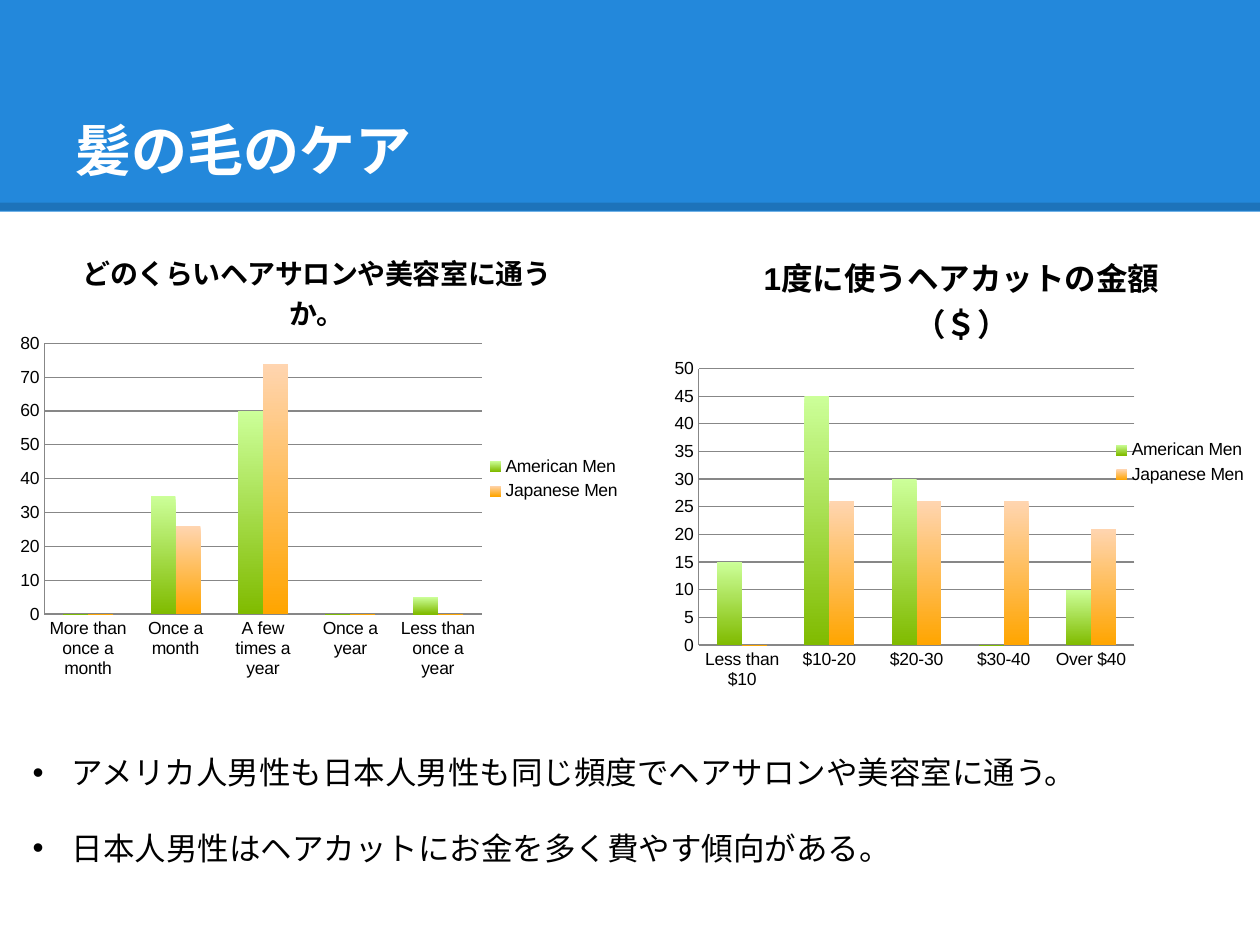
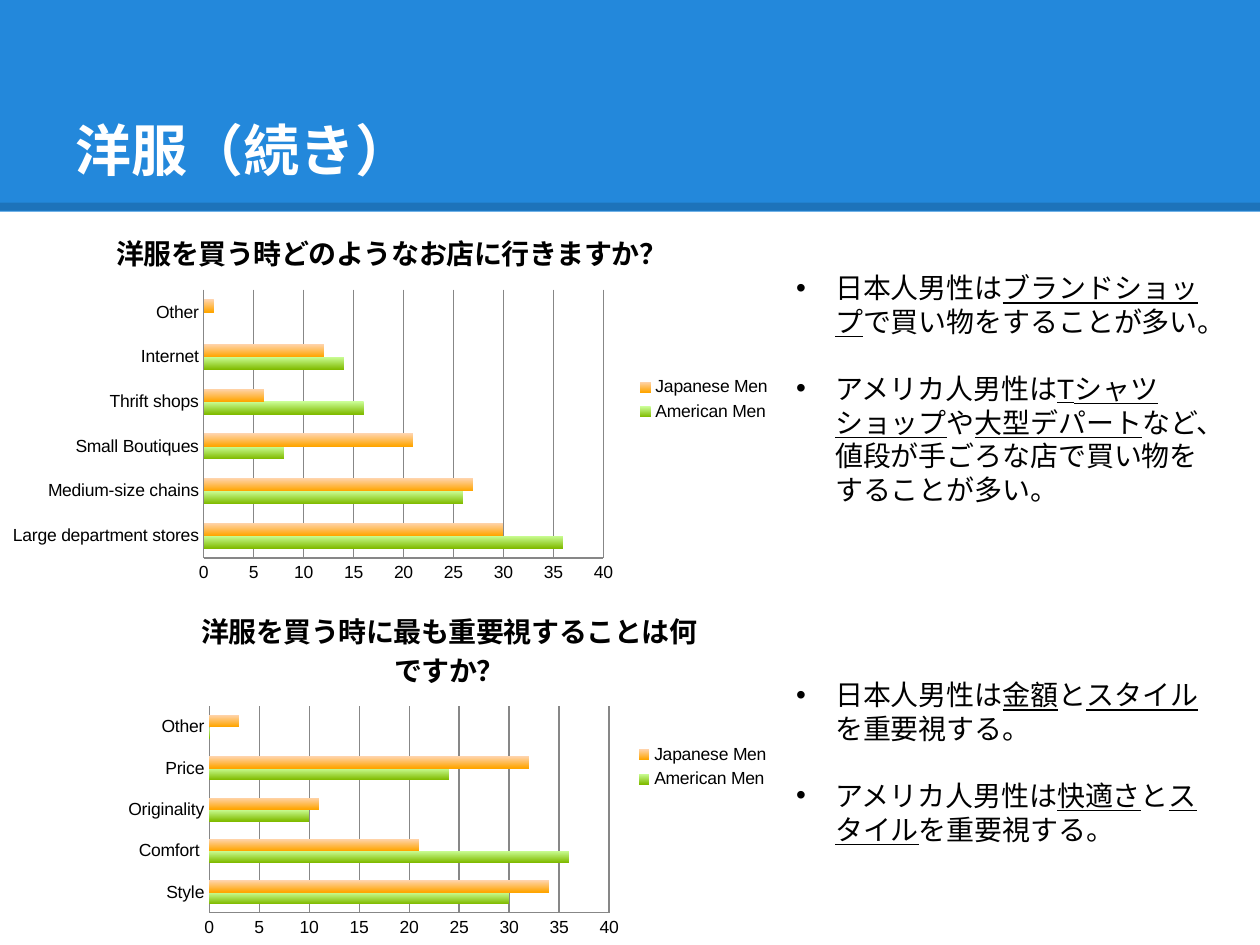
from lxml import etree
from pptx import Presentation
from pptx.chart.data import CategoryChartData
from pptx.dml.color import RGBColor
from pptx.enum.chart import XL_CHART_TYPE, XL_LEGEND_POSITION, XL_TICK_MARK
from pptx.enum.shapes import MSO_CONNECTOR, MSO_SHAPE
from pptx.enum.text import MSO_ANCHOR, PP_ALIGN
from pptx.oxml import parse_xml
from pptx.oxml.ns import nsdecls, qn
from pptx.util import Inches, Pt

COLUMNS = XL_CHART_TYPE.COLUMN_CLUSTERED
BARS = XL_CHART_TYPE.BAR_CLUSTERED
RIGHT = XL_LEGEND_POSITION.RIGHT
NO_TICK = XL_TICK_MARK.NONE
RECT = MSO_SHAPE.RECTANGLE
STRAIGHT = MSO_CONNECTOR.STRAIGHT
BOTTOM = MSO_ANCHOR.BOTTOM
LEFT = PP_ALIGN.LEFT

# The slide is a grid of 100 columns by 75 rows
UNIT = Inches(0.1)
COLS, ROWS = 100, 75
FONT = "Arial"
TITLE_ONLY = 5
COLORS = {
    "band": "2388DB", "rule": "000000", "title": "FFFFFF", "text": "000000",
    "grid": "878787",
}
GRADIENTS = [("CCFF99", "80BB00"), ("FFD5B0", "FFA500")]
TITLE_FORMAT = {"name": FONT, "size": Pt(32), "bold": True}


def rgb(name):
    return RGBColor.from_string(COLORS.get(name, name))


def grid(*cells):
    return [int(cell * UNIT) for cell in cells]


def set_font(font, color, **values):
    for key, value in values.items():
        setattr(font, key, value)
    font.color.rgb = rgb(color)


def add_band(slide):
    """Blue title band with a translucent rule, behind the title."""
    band = slide.shapes.add_shape(RECT, *grid(0, 0, COLS, 16.8))
    band.shadow.inherit = False
    band.fill.solid()
    band.fill.fore_color.rgb = rgb("band")
    band.line.fill.background()

    rule = slide.shapes.add_connector(STRAIGHT, *grid(0, 16.4, COLS, 16.4))
    rule.line.width = Pt(4.5)
    rule.line.color.rgb = rgb("rule")
    sp_pr = rule._element.spPr
    color = sp_pr.find(".//" + qn("a:srgbClr"))
    etree.SubElement(color, qn("a:alpha")).set("val", "15000")
    etree.SubElement(sp_pr, qn("a:effectLst"))

    tree = slide.shapes._spTree
    for index, sp in enumerate((band, rule), start=2):
        tree.insert(index, sp._element)


def add_titled_slide(prs, text):
    slide = prs.slides.add_slide(prs.slide_layouts[TITLE_ONLY])
    title = slide.shapes.title
    title.left, title.top, title.width, title.height = grid(5, 3, 90, 12.5)
    tf = title.text_frame
    tf.text = text
    tf.vertical_anchor = BOTTOM
    for side in ("left", "right", "top", "bottom"):
        setattr(tf, f"margin_{side}", UNIT)
    p = tf.paragraphs[0]
    p.alignment = LEFT
    set_font(p.runs[0].font, "title", **TITLE_FORMAT)
    add_band(slide)
    return slide


def set_plot_layout(chart, shares):
    """Place the inner plot area by shares of the chart's size."""
    x, y, w, h = shares
    layout = parse_xml(
        f'<c:layout {nsdecls("c")}><c:manualLayout>'
        '<c:layoutTarget val="inner"/><c:xMode val="edge"/><c:yMode val="edge"/>'
        f'<c:x val="{x}"/><c:y val="{y}"/><c:w val="{w}"/><c:h val="{h}"/>'
        '</c:manualLayout></c:layout>')
    plot_area = chart._chartSpace.chart.plotArea
    for old in plot_area.findall(qn("c:layout")):
        plot_area.remove(old)
    plot_area.insert(0, layout)


def format_axes(chart, top, step):
    value_axis, category_axis = chart.value_axis, chart.category_axis
    value_axis.minimum_scale = 0
    value_axis.maximum_scale = top
    value_axis.major_unit = step
    value_axis.has_major_gridlines = True
    for axis in (value_axis, category_axis):
        axis.major_tick_mark = axis.minor_tick_mark = NO_TICK
    for line in (value_axis.major_gridlines.format.line,
                 value_axis.format.line, category_axis.format.line):
        line.color.rgb = rgb("grid")
        line.width = Pt(0.75)


def add_survey_chart(slide, kind, cells, title, answers, plot, scale, size=16):
    """answers maps each category to its (American, Japanese) share."""
    data = CategoryChartData()
    data.categories = list(answers)
    for name, values in zip(("American Men", "Japanese Men"),
                            zip(*answers.values())):
        data.add_series(name, values)
    chart = slide.shapes.add_chart(kind, *grid(*cells), data).chart
    set_font(chart.font, "text", name=FONT, size=Pt(10))

    chart.has_title = True
    tf = chart.chart_title.text_frame
    tf.text = title
    set_font(tf.paragraphs[0].runs[0].font, "text",
             name=FONT, size=Pt(size), bold=True)
    chart.chart_title.include_in_layout = False
    chart.has_legend = True
    chart.legend.position = RIGHT
    chart.legend.include_in_layout = False

    bars = chart.plots[0]
    bars.gap_width, bars.overlap, bars.vary_by_categories = 150, 0, False
    for series, shades in zip(bars.series, GRADIENTS):
        fill = series.format.fill
        fill.gradient()
        fill.gradient_angle = 270
        for stop, shade in zip(fill.gradient_stops, shades):
            stop.color.rgb = rgb(shade)
    format_axes(chart, *scale)
    set_plot_layout(chart, plot)


def add_bullets(slide, cells, size, lines):
    """Bulleted text; parts between underscores are underlined."""
    tf = slide.shapes.add_textbox(*grid(*cells)).text_frame
    tf.word_wrap = True
    for i, line in enumerate(lines):
        p = tf.add_paragraph() if i else tf.paragraphs[0]
        p.space_before = Pt(1.2 * size if i else 0)
        p_pr = p._p.get_or_add_pPr()
        indent = Inches(0.31)
        p_pr.set("marL", str(indent))
        p_pr.set("indent", str(-indent))
        etree.SubElement(p_pr, qn("a:buFont")).set("typeface", FONT)
        etree.SubElement(p_pr, qn("a:buChar")).set("char", "•")
        for j, part in enumerate(line.split("_")):
            if part:
                r = p.add_run()
                r.text = part
                set_font(r.font, "text", name=FONT, size=Pt(size),
                         underline=j % 2 == 1)


def build_hair_slide(prs):
    slide = add_titled_slide(prs, "髪の毛のケア")
    add_survey_chart(
        slide, COLUMNS, (0, 18.1, 50.3, 39.8),
        "どのくらいヘアサロンや美容室に通うか。",
        {"More than once a month": (0, 0), "Once a month": (35, 26),
         "A few times a year": (60, 74), "Once a year": (0, 0),
         "Less than once a year": (5, 0)},
        plot=(0.07, 0.23, 0.69, 0.54), scale=(80, 10))
    add_survey_chart(
        slide, COLUMNS, (52.6, 18.1, 47.4, 37.2),
        "1度に使うヘアカットの金額（＄）",
        {"Less than $10": (15, 0), "$10-20": (45, 26), "$20-30": (30, 26),
         "$30-40": (0, 26), "Over $40": (10, 21)},
        plot=(0.06, 0.3, 0.73, 0.59), scale=(50, 5), size=18)
    add_bullets(slide, (1.6, 59.3, 95.1, 10.1), 18, [
        "アメリカ人男性も日本人男性も同じ頻度でヘアサロンや美容室に通う。",
        "日本人男性はヘアカットにお金を多く費やす傾向がある。"])


def build_clothes_slide(prs):
    slide = add_titled_slide(prs, "洋服（続き）")
    add_survey_chart(
        slide, BARS, (0, 16.7, 62.2, 30),
        "洋服を買う時どのようなお店に行きますか？",
        {"Large department stores": (36, 30), "Medium-size chains": (26, 27),
         "Small Boutiques": (8, 21), "Thrift shops": (16, 6),
         "Internet": (14, 12), "Other": (0, 1)},
        plot=(0.26, 0.21, 0.51, 0.71), scale=(40, 5))
    add_survey_chart(
        slide, BARS, (9.2, 46.7, 52.9, 28.3),
        "洋服を買う時に最も重要視することは何ですか？",
        {"Style": (30, 34), "Comfort ": (36, 21), "Originality": (10, 11),
         "Price": (24, 32), "Other": (0, 3)},
        plot=(0.14, 0.33, 0.6, 0.58), scale=(40, 5))
    add_bullets(slide, (62.2, 21, 35.4, 22.6), 16, [
        "日本人男性は_ブランドショップ_で買い物をすることが多い。",
        "アメリカ人男性は_Tシャツショップ_や_大型デパート_など、"
        "値段が手ごろな店で買い物をすることが多い。"])
    add_bullets(slide, (62.2, 53.3, 35.4, 14.5), 16, [
        "日本人男性は_金額_と_スタイル_を重要視する。",
        "アメリカ人男性は_快適さ_と_スタイル_を重要視する。"])


def main():
    prs = Presentation()
    prs.slide_width, prs.slide_height = grid(COLS, ROWS)
    build_hair_slide(prs)
    build_clothes_slide(prs)
    prs.save("out.pptx")


if __name__ == "__main__":
    main()
